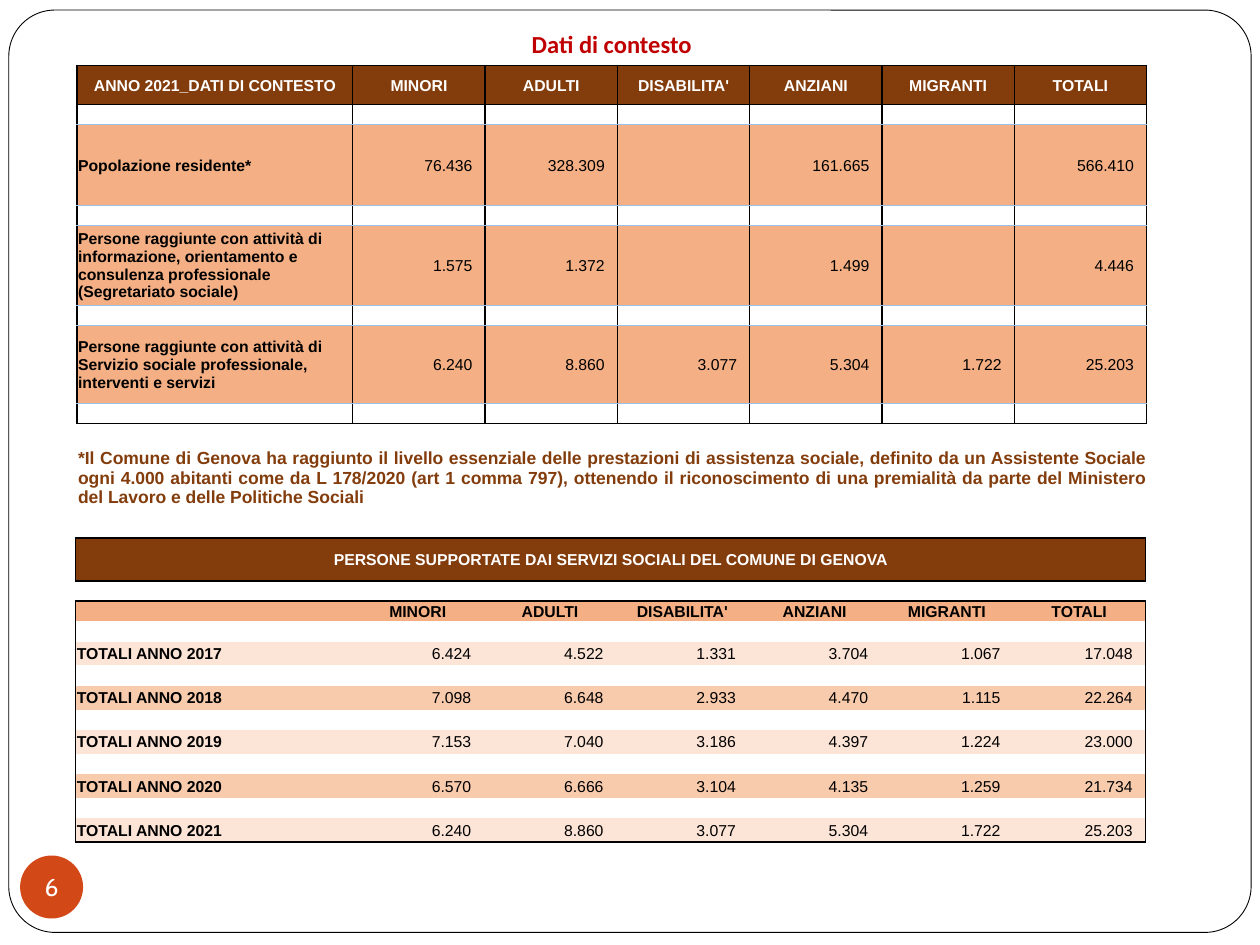
import dataclasses

import lxml.etree
import pptx
import pptx.dml.color
import pptx.enum.shapes
import pptx.enum.text
import pptx.oxml.ns
import pptx.util

Inches = pptx.util.Inches
Pt = pptx.util.Pt
Align = pptx.enum.text.PP_ALIGN
Anchor = pptx.enum.text.MSO_ANCHOR
Shape = pptx.enum.shapes.MSO_SHAPE
qn = pptx.oxml.ns.qn


@dataclasses.dataclass(frozen=True)
class Theme:
    white: str = "FFFFFF"
    black: str = "000000"
    brown: str = "833C0C"
    orange: str = "F4B084"
    peach: str = "F8CBAD"
    cream: str = "FCE4D6"
    blue: str = "9BC2E6"
    red: str = "C00000"
    badge: str = "D34817"
    title_size: float = 14
    note_size: float = 10
    cell_size: float = 9


@dataclasses.dataclass
class Row:
    height: float
    texts: tuple = ()
    fill: str = ""
    kind: str = "data"
    sides: str = ""
    merged: bool = False


THEME = Theme()
COLUMN_WIDTHS = [2.19] + [1.05] * 6
GROUPS = ("MINORI", "ADULTI", "DISABILITA'", "ANZIANI", "MIGRANTI", "TOTALI")
BLACK_LINE = (THEME.black, 1)
BLUE_LINE = (THEME.blue, 0.5)

CONTEXT = [
    (0.64, ("Popolazione residente*", "76.436", "328.309", "", "161.665", "", "566.410")),
    (0.63, ("Persone raggiunte con attività di informazione, orientamento e consulenza "
            "professionale (Segretariato sociale)",
            "1.575", "1.372", "", "1.499", "", "4.446")),
    (0.62, ("Persone raggiunte con attività di Servizio sociale professionale, "
            "interventi e servizi",
            "6.240", "8.860", "3.077", "5.304", "1.722", "25.203")),
]
NOTE = ("*Il Comune di Genova ha raggiunto il livello essenziale delle prestazioni di "
        "assistenza sociale, definito da un Assistente Sociale ogni 4.000 abitanti come da "
        "L 178/2020 (art 1 comma 797), ottenendo il riconoscimento di una premialità da "
        "parte del Ministero del Lavoro e delle Politiche Sociali")
YEARS = [
    ("TOTALI ANNO 2017", "6.424", "4.522", "1.331", "3.704", "1.067", "17.048"),
    ("TOTALI ANNO 2018", "7.098", "6.648", "2.933", "4.470", "1.115", "22.264"),
    ("TOTALI ANNO 2019", "7.153", "7.040", "3.186", "4.397", "1.224", "23.000"),
    ("TOTALI ANNO 2020", "6.570", "6.666", "3.104", "4.135", "1.259", "21.734"),
    ("TOTALI ANNO 2021", "6.240", "8.860", "3.077", "5.304", "1.722", "25.203"),
]
TEXT_FORMATS = {
    "header": (Align.CENTER, THEME.white, THEME.cell_size, True),
    "groups": (Align.CENTER, THEME.black, THEME.cell_size, True),
    "label": (Align.LEFT, THEME.black, THEME.cell_size, True),
    "data": (Align.RIGHT, THEME.black, THEME.cell_size, False),
    "note": (Align.JUSTIFY, THEME.brown, THEME.note_size, True),
}


def rgb(color):
    return pptx.dml.color.RGBColor.from_string(color)


def set_values(target, values):
    for name, value in values.items():
        setattr(target, name, value)


def write(para, text, align, color, size, bold, font="Arial"):
    para.alignment = align
    span = para.add_run()
    span.text = text
    set_values(span.font, {"name": font, "size": Pt(size), "bold": bold})
    span.font.color.rgb = rgb(color)


def draw_borders(cell, borders):
    properties = cell._tc.get_or_add_tcPr()
    for side in "LRTB":
        line = lxml.etree.SubElement(properties, qn(f"a:ln{side}"))
        if borders[side]:
            color, width = borders[side]
            line.set("w", str(Pt(width)))
            fill = lxml.etree.SubElement(line, qn("a:solidFill"))
            lxml.etree.SubElement(fill, qn("a:srgbClr")).set("val", color)
        else:
            line.set("w", "0")
            lxml.etree.SubElement(line, qn("a:noFill"))


def fill_cell(cell, row, column):
    set_values(cell, {
        "margin_left": Inches(0.01), "margin_top": Inches(0.01),
        "margin_right": Inches(0.01), "margin_bottom": 0,
        "vertical_anchor": Anchor.TOP if row.kind == "note" else Anchor.MIDDLE,
    })
    para = cell.text_frame.paragraphs[0]
    text = row.texts[column] if column < len(row.texts) else ""
    kind = "label" if row.kind == "data" and column == 0 else row.kind
    if text:
        write(para, text, *TEXT_FORMATS[kind])
        if kind == "data":
            cell.margin_right = Inches(0.1)
    else:
        ending = lxml.etree.SubElement(para._p, qn("a:endParaRPr"))
        ending.set("sz", str(THEME.cell_size * 100))
    if row.fill:
        cell.fill.solid()
        cell.fill.fore_color.rgb = rgb(row.fill)
    else:
        cell.fill.background()


def add_grid(page, box, rows, rules):
    table = page.shapes.add_table(len(rows), len(COLUMN_WIDTHS), *map(Inches, box)).table
    set_values(table, {"first_row": False, "horz_banding": False})
    for column, width in zip(table.columns, COLUMN_WIDTHS):
        column.width = Inches(width)
    last = len(COLUMN_WIDTHS) - 1
    for index, row in enumerate(rows):
        table.rows[index].height = Inches(row.height)
        if row.merged:
            table.cell(index, 0).merge(table.cell(index, last))
        for column in range(last + 1):
            cell = table.cell(index, column)
            left = row.sides == "all" or row.sides == "outer" and column == 0
            right = row.sides == "all" or row.sides == "outer" and column == last
            right = right or bool(row.sides) and row.merged and column == 0
            draw_borders(cell, {
                "L": BLACK_LINE if left else None, "R": BLACK_LINE if right else None,
                "T": rules[index], "B": rules[index + 1],
            })
            fill_cell(cell, row, column)


def add_context_table(page, box):
    rows = [Row(0.31, ("ANNO 2021_DATI DI CONTESTO",) + GROUPS, THEME.brown, "header", "all"),
            Row(0.16, sides="all")]
    for height, texts in CONTEXT:
        rows += [Row(height, texts, THEME.orange, sides="all"), Row(0.16, sides="all")]
    rows += [Row(0.19, fill=THEME.white),
             Row(0.58, (NOTE,), THEME.white, "note", merged=True)]
    rules = [BLACK_LINE] * 2 + [BLUE_LINE] * 6 + [BLACK_LINE, None, None]
    add_grid(page, box, rows, rules)


def add_years_table(page, box):
    heading = "PERSONE SUPPORTATE DAI SERVIZI SOCIALI DEL COMUNE DI GENOVA"
    rows = [Row(0.34, (heading,), THEME.brown, "header", "outer", True), Row(0.16),
            Row(0.16, ("",) + GROUPS, THEME.orange, "groups", "outer")]
    for index, texts in enumerate(YEARS):
        fill = THEME.peach if index % 2 else THEME.cream
        rows += [Row(0.16, sides="outer"), Row(0.19, texts, fill, sides="outer")]
    rules = [BLACK_LINE] * 3 + [None] * (len(rows) - 3) + [BLACK_LINE]
    add_grid(page, box, rows, rules)


def add_panel(page, kind, box, fill):
    panel = page.shapes.add_shape(kind, *map(Inches, box))
    panel.shadow.inherit = False
    panel.fill.solid()
    panel.fill.fore_color.rgb = rgb(fill)
    panel.line.fill.background()
    return panel


def add_frame(page, box):
    frame = add_panel(page, Shape.ROUNDED_RECTANGLE, box, THEME.white)
    frame.adjustments[0] = 0.05
    frame.line.color.rgb = rgb(THEME.black)
    frame.line.width = Pt(0.5)


def add_page_number(page, box):
    text = add_panel(page, Shape.OVAL, box, THEME.badge).text_frame
    set_values(text, {"margin_left": 0, "margin_right": 0, "margin_top": 0,
                      "margin_bottom": 0, "word_wrap": False,
                      "vertical_anchor": Anchor.MIDDLE})
    write(text.paragraphs[0], "6", Align.CENTER, THEME.white, THEME.title_size, False, "Cabin")


def add_title(page, box):
    text = page.shapes.add_textbox(*map(Inches, box)).text_frame
    text.word_wrap = True
    write(text.paragraphs[0], "Dati di contesto", Align.CENTER, THEME.red,
          THEME.title_size, True, "Calibri")


def main():
    deck = pptx.Presentation()
    set_values(deck, {"slide_width": Inches(10), "slide_height": Inches(7.5)})
    page = deck.slides.add_slide(deck.slide_layouts[6])
    add_frame(page, (0.07, 0.08, 9.86, 7.32))
    add_page_number(page, (0.16, 6.79, 0.5, 0.5))
    add_title(page, (0.21, 0.18, 9.29, 0.34))
    add_context_table(page, (0.61, 0.52, 8.5, 3.61))
    add_years_table(page, (0.6, 4.27, 8.5, 2.4))
    deck.save("out.pptx")


if __name__ == "__main__":
    main()
